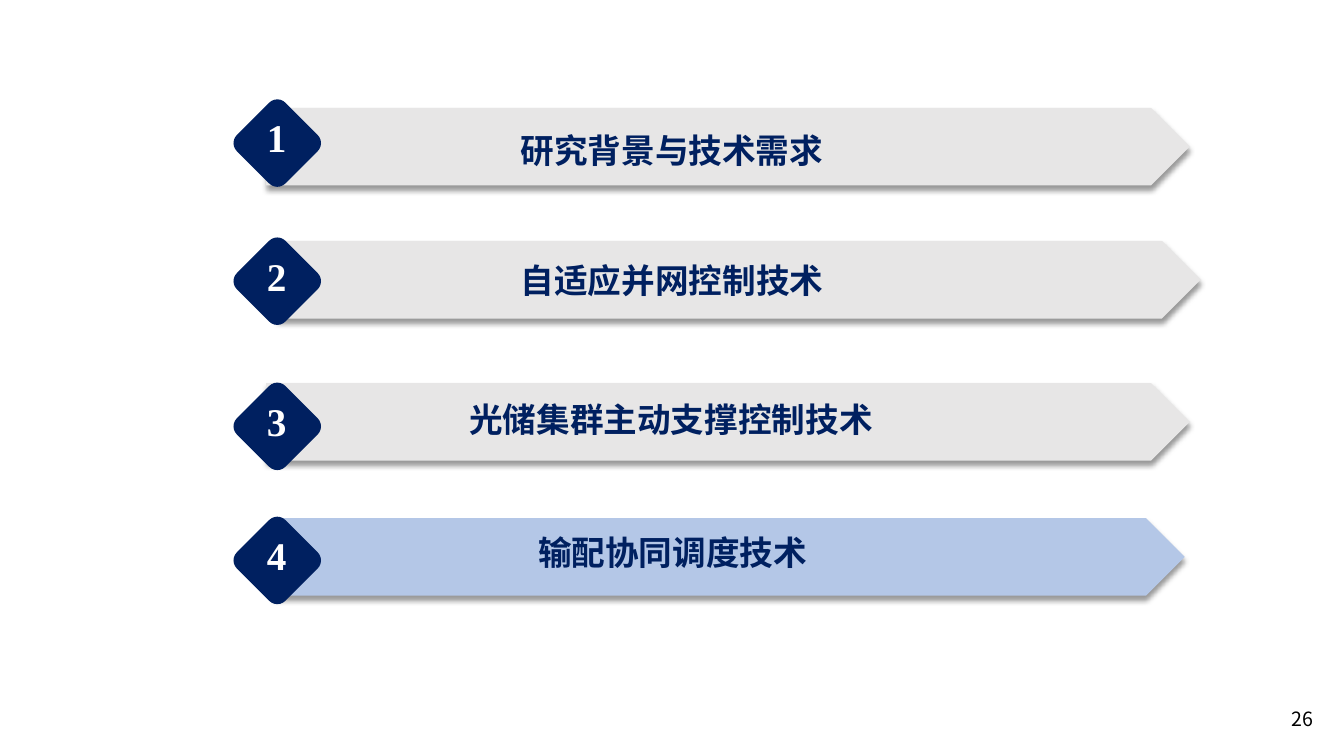
from collections import namedtuple

from lxml import etree
from pptx import Presentation
from pptx.dml.color import RGBColor
from pptx.enum.shapes import MSO_SHAPE
from pptx.enum.text import MSO_AUTO_SIZE, PP_ALIGN
from pptx.oxml.ns import qn
from pptx.util import Pt

PLATE = MSO_SHAPE.PENTAGON
ROUNDED = MSO_SHAPE.ROUNDED_RECTANGLE
LEFT = PP_ALIGN.LEFT
CENTER = PP_ALIGN.CENTER
GROW = MSO_AUTO_SIZE.SHAPE_TO_FIT_TEXT
EMU_PER_PX = 9144

Theme = namedtuple("Theme", "navy grey blue white black serif sans number title page")
THEME = Theme(
    navy="002060", grey="E7E6E6", blue="B4C7E7", white="FFFFFF", black="000000",
    serif="Times New Roman", sans="Noto Sans CJK SC", number=28, title=24, page=14,
)

Row = namedtuple("Row", "title plate badge_top title_box fill")
ROWS = [
    Row("研究背景与技术需求", (264, 107, 916), 108, (333, 124, 667), THEME.grey),
    Row("自适应并网控制技术", (275, 239, 916), 245, (391, 253, 551), THEME.grey),
    Row("光储集群主动支撑控制技术", (264, 380, 916), 389, (407, 391, 517), THEME.grey),
    Row("输配协同调度技术", (271, 514, 904), 522, (407, 523, 520), THEME.blue),
]
PLATE_HEIGHT = 77
BADGE_LEFT, BADGE_SIZE = 241, 68
NUMBER_LEFT, NUMBER_WIDTH, NUMBER_HEIGHT = 255, 40, 57
TITLE_HEIGHT = 50


def px(*values):
    return [v * EMU_PER_PX for v in values]


class Deck:
    def __init__(self, theme):
        self.theme = theme
        self.prs = Presentation()
        self.prs.slide_width, self.prs.slide_height = px(1333, 750)
        self.s = self.prs.slides.add_slide(self.prs.slide_layouts[6])

    def shape(self, kind, box, fill):
        sp = self.s.shapes.add_shape(kind, *px(*box))
        sp.shadow.inherit = False
        sp.fill.solid()
        sp.fill.fore_color.rgb = RGBColor.from_string(fill)
        sp.line.fill.background()
        return sp

    def plate(self, box, fill):
        sp = self.shape(PLATE, box, fill)
        effects = sp._element.spPr.find(qn("a:effectLst"))
        shadow = etree.SubElement(
            effects, qn("a:outerShdw"), blurRad=str(Pt(4)), dist=str(Pt(3)),
            dir="5400000", algn="t", rotWithShape="0")
        color = etree.SubElement(shadow, qn("a:srgbClr"), val=self.theme.black)
        etree.SubElement(color, qn("a:alpha"), val="40000")

    def badge(self, top, number):
        sp = self.shape(ROUNDED, (BADGE_LEFT, top, BADGE_SIZE, BADGE_SIZE), self.theme.navy)
        sp.rotation = 45
        self.text((NUMBER_LEFT, top, NUMBER_WIDTH, NUMBER_HEIGHT), str(number),
                  self.theme.number, self.theme.white, wrap=False)

    def text(self, box, text, size, color, font=THEME.serif, bold=True, align=LEFT, wrap=True):
        tf = self.s.shapes.add_textbox(*px(*box)).text_frame
        tf.word_wrap = wrap
        tf.auto_size = GROW
        p = tf.paragraphs[0]
        p.alignment = align
        r = p.add_run()
        r.text = text
        r.font.size = Pt(size)
        r.font.bold = bold
        r.font.color.rgb = RGBColor.from_string(color)
        r.font.name = font
        etree.SubElement(r._r.get_or_add_rPr(), qn("a:ea"), typeface=self.theme.sans)

    def agenda_row(self, number, row):
        self.plate((*row.plate, PLATE_HEIGHT), row.fill)
        self.badge(row.badge_top, number)
        self.text((*row.title_box, TITLE_HEIGHT), row.title,
                  self.theme.title, self.theme.navy, align=CENTER)


def main():
    deck = Deck(THEME)
    for number, row in enumerate(ROWS, 1):
        deck.agenda_row(number, row)
    deck.text((1271, 696, 62, 40), "26", THEME.page, THEME.black, font=THEME.sans, bold=False)
    deck.prs.save("out.pptx")


if __name__ == "__main__":
    main()
